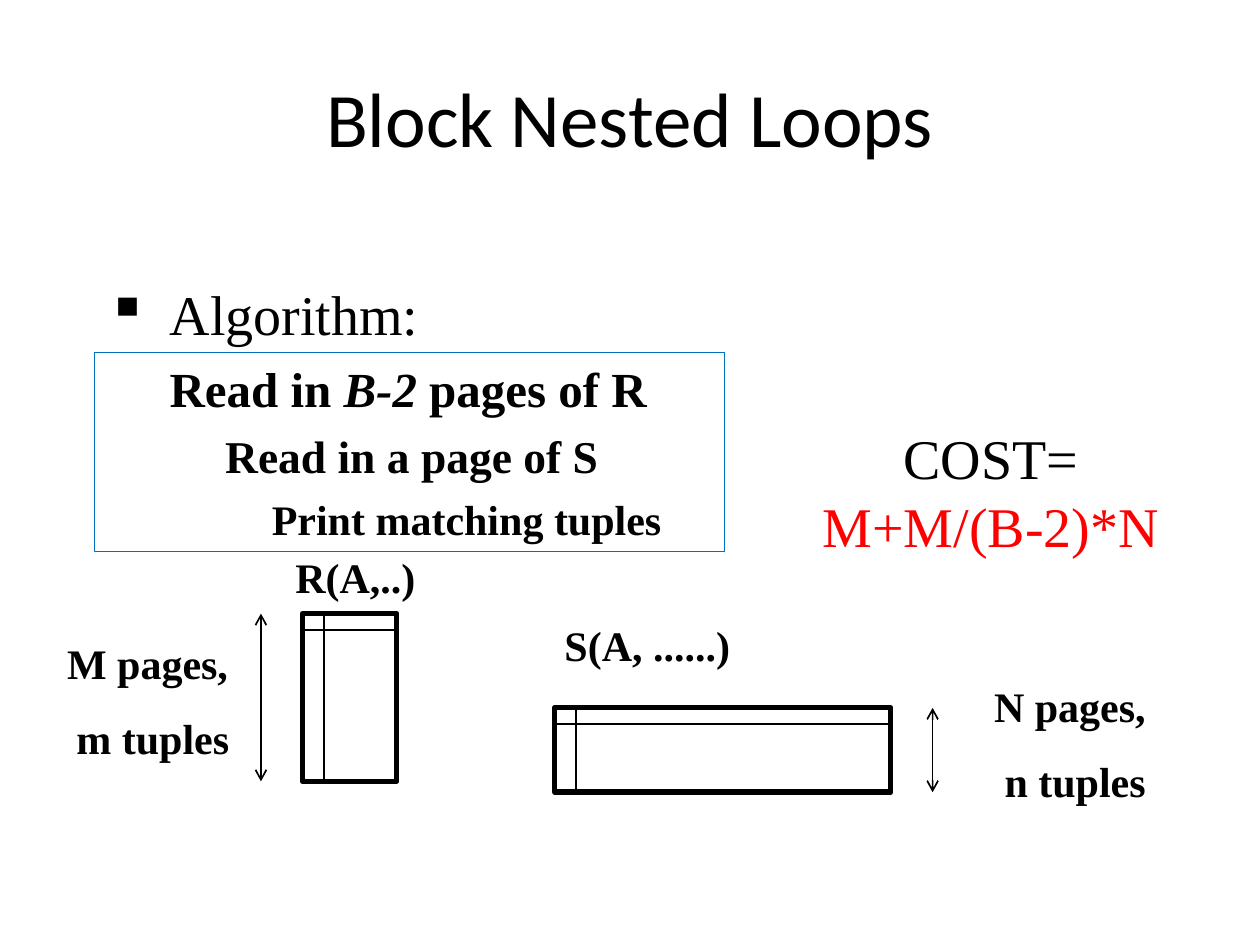
from dataclasses import dataclass

from lxml import etree
from pptx import Presentation
from pptx.dml.color import RGBColor
from pptx.enum.shapes import MSO_CONNECTOR, MSO_SHAPE
from pptx.enum.text import MSO_ANCHOR, PP_ALIGN
from pptx.oxml.ns import qn
from pptx.util import Cm, Pt

RECTANGLE = MSO_SHAPE.RECTANGLE
STRAIGHT = MSO_CONNECTOR.STRAIGHT
LEFT, CENTER = PP_ALIGN.LEFT, PP_ALIGN.CENTER
TOP, MIDDLE = MSO_ANCHOR.TOP, MSO_ANCHOR.MIDDLE


@dataclass(frozen=True)
class Theme:
    ink: RGBColor = RGBColor(0, 0, 0)
    accent: RGBColor = RGBColor(0xFF, 0, 0)
    frame: RGBColor = RGBColor(0x00, 0x70, 0xC0)
    title_font: str = "Calibri"
    body_font: str = "Times New Roman"
    title: int = 44
    body: int = 32
    label: int = 24
    steps: tuple = (28, 26, 24)


THEME = Theme()


def style_run(run, size, bold=False, color=THEME.ink, font=THEME.body_font):
    run.font.name = font
    run.font.size = Pt(size)
    run.font.bold = bold
    run.font.color.rgb = color


def add_text(slide, box, lines, size, align=LEFT, anchor=TOP, gap=0, **style):
    """Place one paragraph per line, with a gap in points between them."""
    text_frame = slide.shapes.add_textbox(*map(Cm, box)).text_frame
    text_frame.word_wrap = True
    text_frame.vertical_anchor = anchor
    text_frame.text = "\n".join(lines)
    for index, paragraph in enumerate(text_frame.paragraphs):
        paragraph.alignment = align
        if index:
            paragraph.space_before = Pt(gap)
        for run in paragraph.runs:
            style_run(run, size, **style)
    return text_frame


def add_frame(slide, box, color, width):
    shape = slide.shapes.add_shape(RECTANGLE, *map(Cm, box))
    shape.shadow.inherit = False
    shape.fill.background()
    shape.line.color.rgb = color
    shape.line.width = Pt(width)
    return shape


def add_line(slide, x1, y1, x2, y2, arrows=False):
    line = slide.shapes.add_connector(STRAIGHT, *map(Cm, (x1, y1, x2, y2)))
    line.line.color.rgb = THEME.ink
    line.line.width = Pt(1)
    properties = line._element.spPr
    if arrows:
        outline = properties.find(qn("a:ln"))
        for end in ("a:headEnd", "a:tailEnd"):
            etree.SubElement(outline, qn(end), type="arrow")
    etree.SubElement(properties, qn("a:effectLst"))


def set_indent(paragraph, left, first=0):
    properties = paragraph._p.get_or_add_pPr()
    properties.set("marL", str(Cm(left)))
    properties.set("indent", str(Cm(first)))
    return properties


def add_algorithm(slide, box):
    left, top, width, height = box
    # Bulleted heading
    heading = add_text(slide, (left, top, width, 1.6), ["Algorithm:"], THEME.body)
    properties = set_indent(heading.paragraphs[0], 1.27, -1.27)
    etree.SubElement(properties, qn("a:buChar"), char="▪")

    # Nested steps, each indented further and set smaller
    frame = add_frame(slide, (left, top + 1.6, width, height - 1.6), THEME.frame, 0.75)
    text_frame = frame.text_frame
    text_frame.vertical_anchor = TOP
    text_frame.text = "\n".join(["", "Read in a page of S", "Print matching tuples"])
    first = text_frame.paragraphs[0]
    for part in ("Read in ", "B-2", " pages of R"):
        run = first.add_run()
        run.text = part
        run.font.italic = part == "B-2"
    for paragraph, size, indent in zip(
        text_frame.paragraphs, THEME.steps, (1.27, 2.39, 3.33)
    ):
        paragraph.alignment = LEFT
        set_indent(paragraph, indent)
        if paragraph.runs[0].text != "Read in ":
            paragraph.space_before = Pt(6)
        for run in paragraph.runs:
            style_run(run, size, bold=True)


def add_cost(slide, box):
    text_frame = add_text(
        slide, box, ["COST=", "M+M/(B-2)*N"], THEME.body, CENTER, MIDDLE
    )
    text_frame.paragraphs[1].runs[0].font.color.rgb = THEME.accent


def add_relation(slide, box, name, name_box, pages, pages_box, pages_align, arrow_x):
    """Draw a relation; the label boxes and arrow are offset from its corner."""
    left, top, width, height = box
    right, bottom = left + width, top + height

    def from_corner(offset_box):
        x, y, box_width, box_height = offset_box
        return left + x, top + y, box_width, box_height

    # Table outline with its first column and header row
    add_frame(slide, box, THEME.ink, 3)
    add_line(slide, left + 0.43, bottom, left + 0.43, top)
    add_line(slide, left, top + 0.33, right, top + 0.33)
    # Size arrow and labels
    add_line(slide, left + arrow_x, bottom, left + arrow_x, top, arrows=True)
    add_text(slide, from_corner(name_box), [name], THEME.label, CENTER, bold=True)
    add_text(slide, from_corner(pages_box), pages, THEME.label, pages_align,
             gap=14, bold=True)


def main():
    presentation = Presentation()
    presentation.slide_width, presentation.slide_height = Cm(25.4), Cm(19.05)
    slide = presentation.slides.add_slide(presentation.slide_layouts[6])

    add_text(slide, (1.27, 0.76, 22.86, 3.18), ["Block Nested Loops"], THEME.title,
             CENTER, MIDDLE, font=THEME.title_font)
    add_algorithm(slide, (1.9, 5.51, 12.7, 5.61))
    add_cost(slide, (15.5, 8.4, 8.95, 3))
    add_relation(slide, (6.1, 12.37, 1.9, 3.38),
                 "R(A,..)", (-0.84, -1.37, 3.81, 1.27),
                 ["M pages,", " m tuples"], (-5.03, 0.36, 3.81, 2.79), CENTER, -0.84)
    add_relation(slide, (11.18, 14.27, 6.78, 1.7),
                 "S(A, ......)", (-0.44, -1.9, 4.62, 1.27),
                 ["N pages,", " n tuples"], (8.61, -0.68, 3.81, 2.79), LEFT, 7.62)
    presentation.save("out.pptx")


if __name__ == "__main__":
    main()
